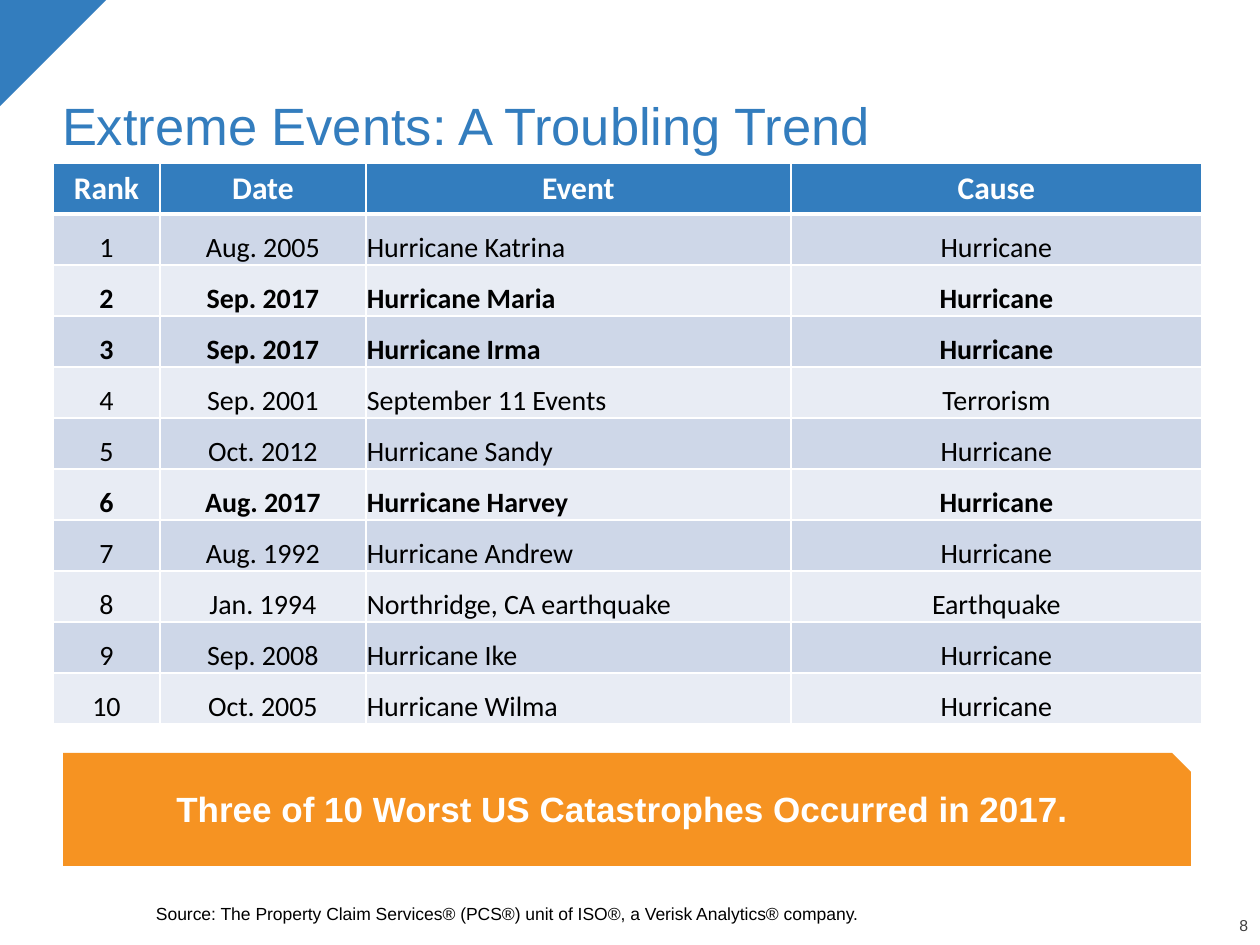
import pptx
import pptx.dml.color
import pptx.enum.shapes
import pptx.enum.text
import pptx.oxml
import pptx.oxml.ns
import pptx.util

RGB = pptx.dml.color.RGBColor
BLUE = RGB(0x33, 0x7D, 0xBE)
ORANGE = RGB(0xF6, 0x93, 0x22)
DARK = RGB(0xCE, 0xD7, 0xE8)
LIGHT = RGB(0xE8, 0xEC, 0xF4)
GREY = RGB(0x40, 0x40, 0x40)
BLACK = RGB(0, 0, 0)
WHITE = RGB(255, 255, 255)

FORM = pptx.enum.shapes.MSO_SHAPE
SIDE = pptx.enum.text.PP_ALIGN
HOLD = pptx.enum.text.MSO_ANCHOR
SCALE = 914400 / 126

HEAD = ("Rank", "Date", "Event", "Cause")
ROWS = (
    ("Aug. 2005", "Hurricane Katrina", "Hurricane"),
    ("Sep. 2017", "Hurricane Maria", "Hurricane"),
    ("Sep. 2017", "Hurricane Irma", "Hurricane"),
    ("Sep. 2001", "September 11 Events", "Terrorism"),
    ("Oct. 2012", "Hurricane Sandy", "Hurricane"),
    ("Aug. 2017", "Hurricane Harvey", "Hurricane"),
    ("Aug. 1992", "Hurricane Andrew", "Hurricane"),
    ("Jan. 1994", "Northridge, CA earthquake", "Earthquake"),
    ("Sep. 2008", "Hurricane Ike", "Hurricane"),
    ("Oct. 2005", "Hurricane Wilma", "Hurricane"),
)


def px(num):
    return pptx.util.Emu(round(num * SCALE))


class Deck:
    def __init__(self, wide, high):
        self.show = pptx.Presentation()
        self.show.slide_width = px(wide)
        self.show.slide_height = px(high)
        self.slide = self.show.slides.add_slide(self.show.slide_layouts[6])
        self.font = "Arial"
        self.cell_font = "Calibri"
        self.lead = 0.9

    def run(self, frame, text, size, color, bold=False, align=SIDE.LEFT,
            font=None, lead=None):
        para = frame.paragraphs[0]
        para.alignment = align
        if lead:
            para.line_spacing = lead
        run = para.add_run()
        run.text = text
        run.font.name = font or self.font
        run.font.size = pptx.util.Pt(size)
        run.font.bold = bold
        run.font.color.rgb = color

    def inset(self, item, left, top, right, base):
        item.margin_left, item.margin_top = px(left), px(top)
        item.margin_right, item.margin_bottom = px(right), px(base)

    def text(self, box, text, size, color, align=SIDE.LEFT, pad=(0, 0, 0, 0)):
        frame = self.slide.shapes.add_textbox(*map(px, box)).text_frame
        frame.word_wrap = True
        frame.vertical_anchor = HOLD.BOTTOM
        self.inset(frame, *pad)
        self.run(frame, text, size, color, align=align, lead=self.lead)

    def shape(self, form, box, color, turn=0):
        shape = self.slide.shapes.add_shape(form, *map(px, box))
        shape.shadow.inherit = False
        shape.fill.solid()
        shape.fill.fore_color.rgb = color
        shape.line.fill.background()
        shape.rotation = turn
        return shape

    def banner(self, box, color, text, size):
        frame = self.shape(FORM.SNIP_1_RECTANGLE, box, color).text_frame
        frame.word_wrap = True
        frame.vertical_anchor = HOLD.MIDDLE
        self.inset(frame, 13, 6, 13, 13)
        self.run(frame, text, size, WHITE, True, SIDE.CENTER, lead=self.lead)

    def border(self, cell, top, base):
        props = cell._tc.get_or_add_tcPr()
        for edge, width in (("L", 1), ("R", 1), ("T", top), ("B", base)):
            props.append(pptx.oxml.parse_xml(
                f'<a:ln{edge} {pptx.oxml.ns.nsdecls("a")} w="{width * 12700}">'
                f'<a:solidFill><a:srgbClr val="{WHITE}"/></a:solidFill>'
                f'</a:ln{edge}>'))

    def table(self, left, top, cols, high, head, rows):
        grid = [head]
        grid += [(str(rank), *row) for rank, row in enumerate(rows, 1)]
        table = self.slide.shapes.add_table(
            len(grid), len(cols), px(left), px(top),
            px(sum(cols)), px(high * len(grid))).table
        for col, wide in zip(table.columns, cols):
            col.width = px(wide)
        for row, vals in enumerate(grid):
            table.rows[row].height = px(high)
            first = row == 0
            bold = first or vals[1].endswith("2017")
            fill = BLUE if first else DARK if row % 2 else LIGHT
            for col, val in enumerate(vals):
                cell = table.cell(row, col)
                self.inset(cell, 1, 1, 1, 0)
                cell.vertical_anchor = HOLD.MIDDLE if first else HOLD.BOTTOM
                self.border(cell, 3 if row == 1 else 1, 3 if first else 1)
                cell.fill.solid()
                cell.fill.fore_color.rgb = fill
                flush = col == 2 and not first
                self.run(cell.text_frame, val, 18 if first else 16,
                         WHITE if first else BLACK, bold,
                         SIDE.LEFT if flush else SIDE.CENTER,
                         self.cell_font)


def main():
    deck = Deck(1260, 945)
    deck.shape(FORM.RIGHT_TRIANGLE, (0, 0, 106, 106), BLUE, 90)
    deck.text((1188, 919, 60, 16), "8", 9, GREY, SIDE.RIGHT)
    deck.text((49, 32, 1166, 131), "Extreme Events: A Troubling Trend",
              30, BLUE, pad=(13, 6, 13, 6))
    deck.table(53, 163, (107, 206, 425, 411), 51, HEAD, ROWS)
    deck.text((156, 867, 1058, 57),
              "Source: The Property Claim Services® (PCS®) unit of ISO®, "
              "a Verisk Analytics® company.", 10, BLACK)
    deck.banner((63, 753, 1128, 113), ORANGE,
                "Three of 10 Worst US Catastrophes Occurred in 2017.", 20)
    deck.show.save("out.pptx")


if __name__ == "__main__":
    main()
